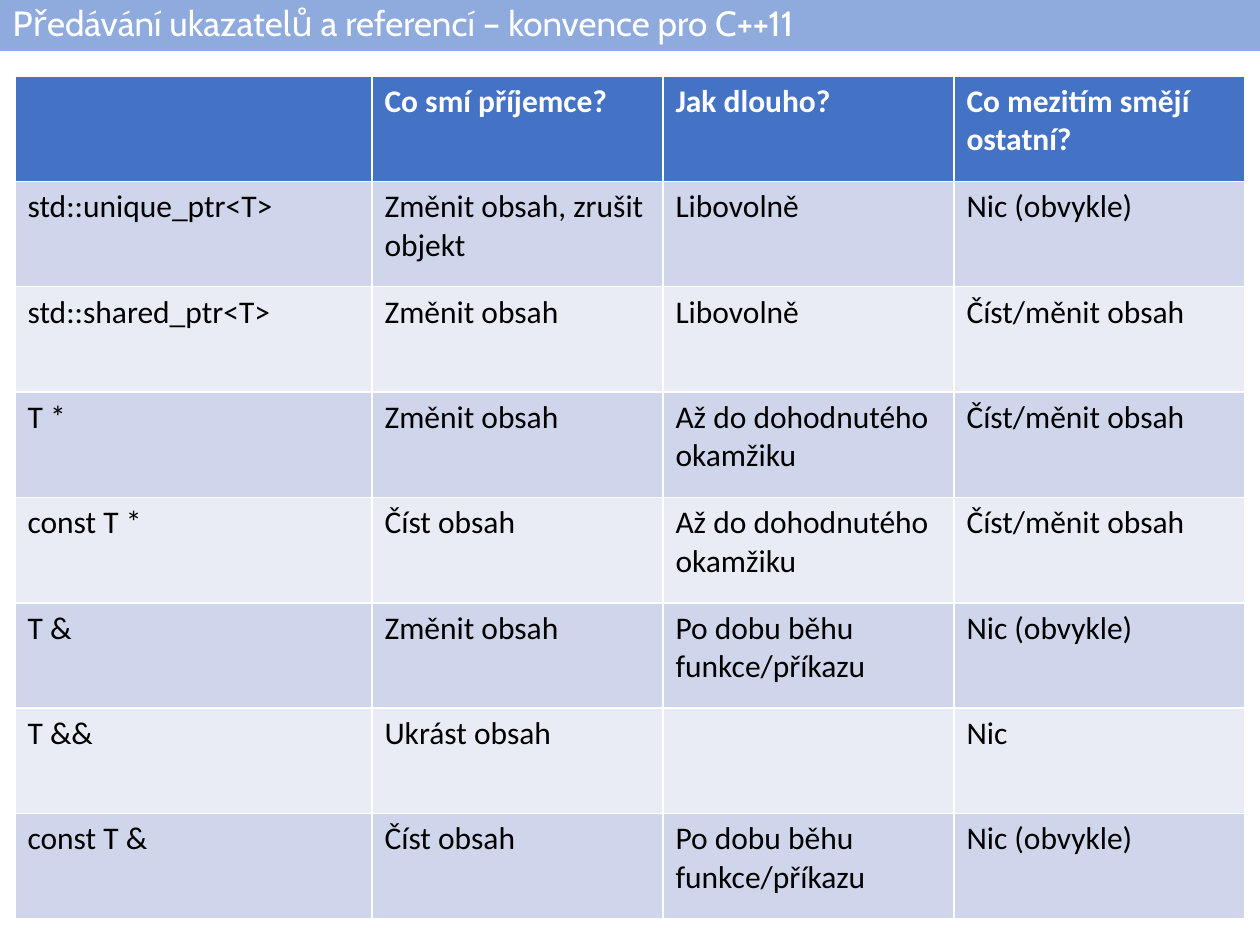
"""Builds a slide with a table of C++11 pointer and reference passing conventions."""
from pptx import Presentation
from pptx import util as u
from pptx.dml.color import RGBColor
from pptx.enum import text

PX = u.Inches(1) / 126
WHITE = RGBColor(0xFF, 0xFF, 0xFF)
BLACK = RGBColor(0x00, 0x00, 0x00)
TITLE_BLUE = RGBColor(0x8F, 0xAA, 0xDC)
HEADER_BLUE = RGBColor(0x44, 0x72, 0xC4)
BANDS = (RGBColor(0xCF, 0xD5, 0xEA), RGBColor(0xE9, 0xEB, 0xF5))

CHANGE, READ, READ_CHANGE = "Změnit obsah", "Číst obsah", "Číst/měnit obsah"
ANY, AGREED, CALL = "Libovolně", "Až do dohodnutého okamžiku", "Po dobu běhu funkce/příkazu"
NOTHING = "Nic (obvykle)"
CONVENTIONS = [
    ("", "Co smí příjemce?", "Jak dlouho?", "Co mezitím smějí ostatní?"),
    ("std::unique_ptr<T>", "Změnit obsah, zrušit objekt", ANY, NOTHING),
    ("std::shared_ptr<T>", CHANGE, ANY, READ_CHANGE),
    ("T *", CHANGE, AGREED, READ_CHANGE),
    ("const T *", READ, AGREED, READ_CHANGE),
    ("T &", CHANGE, CALL, NOTHING),
    ("T &&", "Ukrást obsah", "", "Nic"),
    ("const T &", READ, CALL, NOTHING),
]


def px(n):
    return u.Emu(round(n * PX))


class SlideBuilder:
    def __init__(self, slide, title_font, body_font):
        self.slide = slide
        self.title_font = title_font
        self.body_font = body_font

    def format(self, p, font, size, color, bold=False):
        p.font.name = font
        p.font.size = u.Pt(size)
        p.font.bold = bold
        p.font.color.rgb = color

    def title(self, words, x, y, w, h):
        sp = self.slide.shapes.title
        sp.left, sp.top, sp.width, sp.height = map(px, (x, y, w, h))
        sp.fill.solid()
        sp.fill.fore_color.rgb = TITLE_BLUE
        tf = sp.text_frame
        tf.text = words
        tf.auto_size = text.MSO_AUTO_SIZE.NONE
        tf.vertical_anchor = text.MSO_ANCHOR.MIDDLE
        p = tf.paragraphs[0]
        p.alignment = text.PP_ALIGN.LEFT
        p.line_spacing = 0.9
        self.format(p, self.title_font, 20, WHITE)

    def table(self, rows, x, y, widths, h):
        frame = self.slide.shapes.add_table(
            len(rows), len(widths), px(x), px(y), px(sum(widths)), px(h))
        table = frame.table
        for column, width in zip(table.columns, widths):
            column.width = px(width)
        for i, row in enumerate(rows):
            header = i == 0
            for j, words in enumerate(row):
                cell = table.cell(i, j)
                cell.text = words
                cell.fill.solid()
                cell.fill.fore_color.rgb = HEADER_BLUE if header else BANDS[(i - 1) % 2]
                self.format(cell.text_frame.paragraphs[0], self.body_font, 18,
                            WHITE if header else BLACK, header)


def main():
    prs = Presentation()
    prs.slide_width, prs.slide_height = px(1260), px(945)
    s = prs.slides.add_slide(prs.slide_layouts[5])
    builder = SlideBuilder(s, "Cabin", "Calibri")
    builder.title("Předávání ukazatelů a referencí – konvence pro C++11", 0, 0, 1260, 51)
    builder.table(CONVENTIONS, 15, 76, (357, 291, 291, 291), 843)
    prs.save("out.pptx")


if __name__ == "__main__":
    main()
